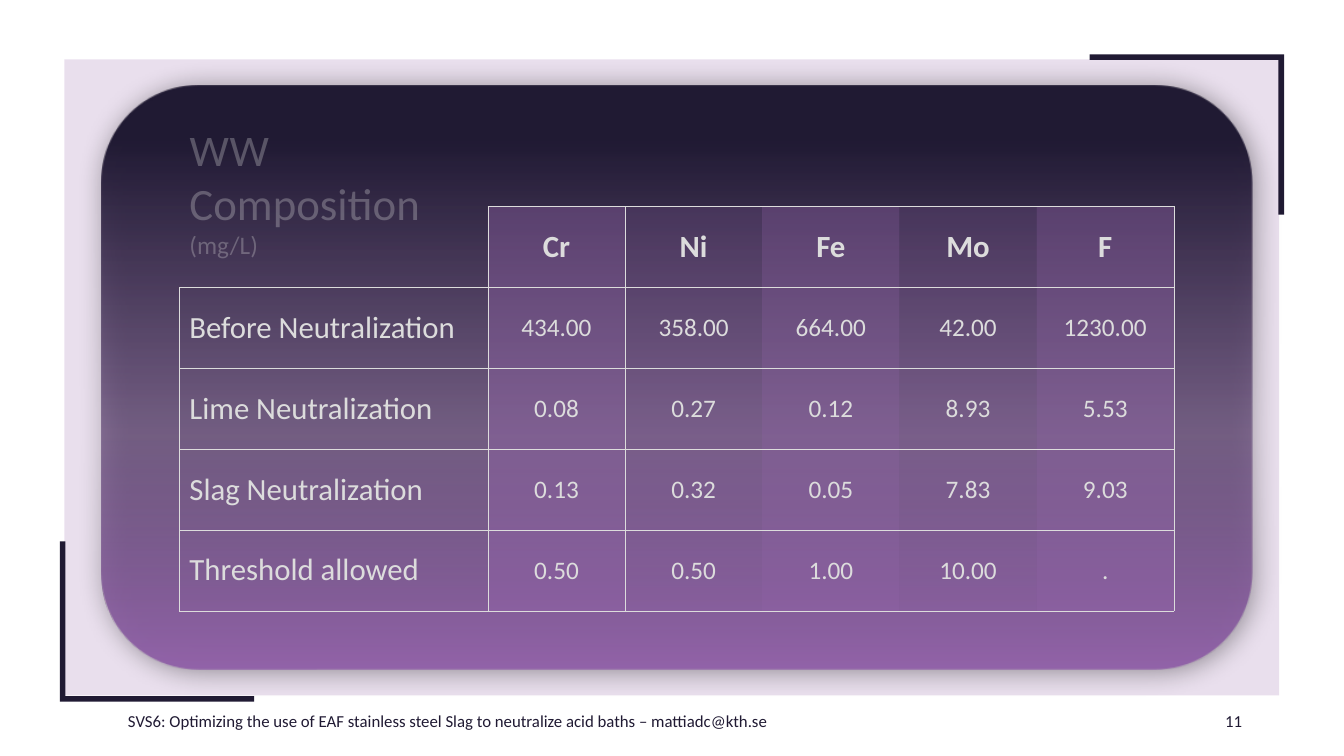
"""Build the slide with the wastewater composition table."""
from dataclasses import dataclass

from lxml.etree import SubElement
from pptx import Presentation
from pptx.dml.color import RGBColor as RGB
from pptx.enum.shapes import MSO_SHAPE as SHAPE
from pptx.enum.text import MSO_ANCHOR as ANCHOR, MSO_AUTO_SIZE as AUTO, PP_ALIGN as ALIGN
from pptx.oxml import parse_xml
from pptx.oxml.ns import nsdecls, qn
from pptx.util import Inches, Pt


@dataclass(frozen=True)
class Theme:
    font: str = "Calibri"
    ink: str = "201A33"
    violet: str = "9263A9"
    plum: str = "5B4070"
    pale: str = "DCDCDC"
    title: int = 32
    label: int = 22
    value: int = 18
    footer: int = 12


T = Theme()
prs = Presentation()
prs.slide_width, prs.slide_height = Inches(13.333), Inches(7.5)


def box(*shares):
    """Turn percentages of the slide's width and height into lengths."""
    sides = (prs.slide_width, prs.slide_height)
    return [round(sides[i % 2] * share / 100) for i, share in enumerate(shares)]


def add_alpha(element, percent):
    """Make the first colour in the element partly transparent."""
    color = next(element.iter(qn("a:srgbClr")))
    SubElement(color, qn("a:alpha"), val=str(percent * 1000))


s = prs.slides.add_slide(prs.slide_layouts[5])

panel = s.shapes.add_shape(SHAPE.RECTANGLE, *box(4.8, 7.87, 90.38, 84.13))
panel.fill.solid()
panel.fill.fore_color.rgb = RGB.from_string(T.violet)
add_alpha(panel.element.spPr, 20)
panel.line.fill.background()
panel.shadow.inherit = False

corner = [(95.55, 7.2), (81.08, 7.2), (81.08, 7.93), (95.13, 7.93), (95.13, 28.4), (95.55, 28.4)]
opposite = [(100 - x, 100 - y) for x, y in corner]
for outline in (corner, opposite):
    points = [box(*point) for point in outline]
    builder = s.shapes.build_freeform(*points[0])
    builder.add_line_segments(points[1:], close=True)
    bracket = builder.convert_to_shape()
    bracket.fill.solid()
    bracket.fill.fore_color.rgb = RGB.from_string(T.ink)
    bracket.line.fill.background()
    bracket.shadow.inherit = False

footers = [
    ("SVS6: Optimizing the use of EAF stainless steel Slag to neutralize acid baths – mattiadc@kth.se",
     6.9, 52.88, ALIGN.CENTER),
    ("11", 86.48, 6.68, ALIGN.RIGHT),
]
for text, left, width, align in footers:
    tf = s.shapes.add_textbox(*box(left, 92.67, width, 5.33)).text_frame
    tf.word_wrap = True
    tf.vertical_anchor = ANCHOR.MIDDLE
    p = tf.paragraphs[0]
    p.text = text
    p.alignment = align
    p.font.name, p.font.size = T.font, Pt(T.footer)
    p.font.color.rgb = RGB.from_string(T.ink)

card = s.shapes.add_shape(SHAPE.ROUNDED_RECTANGLE, *box(7.58, 11.33, 85.58, 77.2))
card.line.fill.background()
card.shadow.inherit = False
spPr = card.element.spPr
spPr.find(qn("a:prstGeom")).addnext(parse_xml(
    f'<a:gradFill {nsdecls("a")} rotWithShape="1"><a:gsLst>'
    f'<a:gs pos="0"><a:srgbClr val="{T.violet}"/></a:gs>'
    f'<a:gs pos="41000"><a:srgbClr val="{T.plum}"><a:alpha val="69000"/></a:srgbClr></a:gs>'
    f'<a:gs pos="91000"><a:srgbClr val="{T.ink}"/></a:gs>'
    '</a:gsLst><a:lin ang="16200000" scaled="0"/></a:gradFill>'))
spPr.find(qn("a:effectLst")).append(parse_xml(
    f'<a:outerShdw {nsdecls("a")} blurRad="{Pt(19)}" dist="{Pt(3)}" dir="2700000" algn="tl" '
    'rotWithShape="0"><a:srgbClr val="000000"><a:alpha val="40000"/></a:srgbClr></a:outerShdw>'))

rows = [
    ["", "Cr", "Ni", "Fe", "Mo", "F"],
    ["Before Neutralization", "434.00", "358.00", "664.00", "42.00", "1230.00"],
    ["Lime Neutralization", "0.08", "0.27", "0.12", "8.93", "5.53"],
    ["Slag Neutralization", "0.13", "0.32", "0.05", "7.83", "9.03"],
    ["Threshold allowed", "0.50", "0.50", "1.00", "10.00", "."],
]
last = len(rows[0]) - 1
frame = s.shapes.add_table(len(rows), last + 1, *box(13.35, 27.33, 74.03, 53.47))
table = frame.table
table.first_row = table.horz_banding = False
next(frame.element.iter(qn("a:tableStyleId"))).text = "{2D5ABB26-0587-4C30-8999-92F81FD0307C}"
label_width, value_width = box(22.95)[0], box(10.21)[0]
for j, column in enumerate(table.columns):
    column.width = value_width if j else label_width

for i, row in enumerate(rows):
    for j, text in enumerate(row):
        cell = table.cell(i, j)
        cell.vertical_anchor = ANCHOR.MIDDLE
        tcPr = cell.fill and cell._tc.get_or_add_tcPr()
        if j:
            cell.fill.solid()
            cell.fill.fore_color.rgb = RGB.from_string(T.violet)
            add_alpha(tcPr, 40 if j % 2 else 20)
        else:
            cell.fill.background()
        filled = i > 0 or j > 0
        edges = {"L": filled and j < 2, "R": j in (0, last), "T": filled, "B": True}
        sides = [side for side, drawn in edges.items() if drawn]
        for k, side in enumerate(sides):
            tcPr.insert(k, parse_xml(
                f'<a:ln{side} {nsdecls("a")} w="{Pt(0.25)}"><a:solidFill>'
                f'<a:srgbClr val="{T.pale}"/></a:solidFill></a:ln{side}>'))
        p = cell.text_frame.paragraphs[0]
        p.text = text
        p.alignment = ALIGN.CENTER if j else ALIGN.LEFT
        p.font.name, p.font.bold = T.font, i == 0
        p.font.size = Pt(T.value if i and j else T.label)
        p.font.color.rgb = RGB.from_string(T.pale)

title = s.shapes.title
title.element.getparent().append(title.element)
title.left, title.top, title.width, title.height = box(13.35, 15.47, 19.28, 19.73)
tf = title.text_frame
tf.text = "WW\nComposition\n(mg/L)"
tf.word_wrap = True
tf.auto_size = AUTO.NONE
tf.vertical_anchor = ANCHOR.TOP
for p, size in zip(tf.paragraphs, (T.title, T.title, T.value)):
    p.alignment = ALIGN.LEFT
    r = p.runs[0]
    r.font.name, r.font.size = T.font, Pt(size)
    r.font.color.rgb = RGB.from_string(T.pale)
    add_alpha(p._p, 29)

prs.save("out.pptx")
